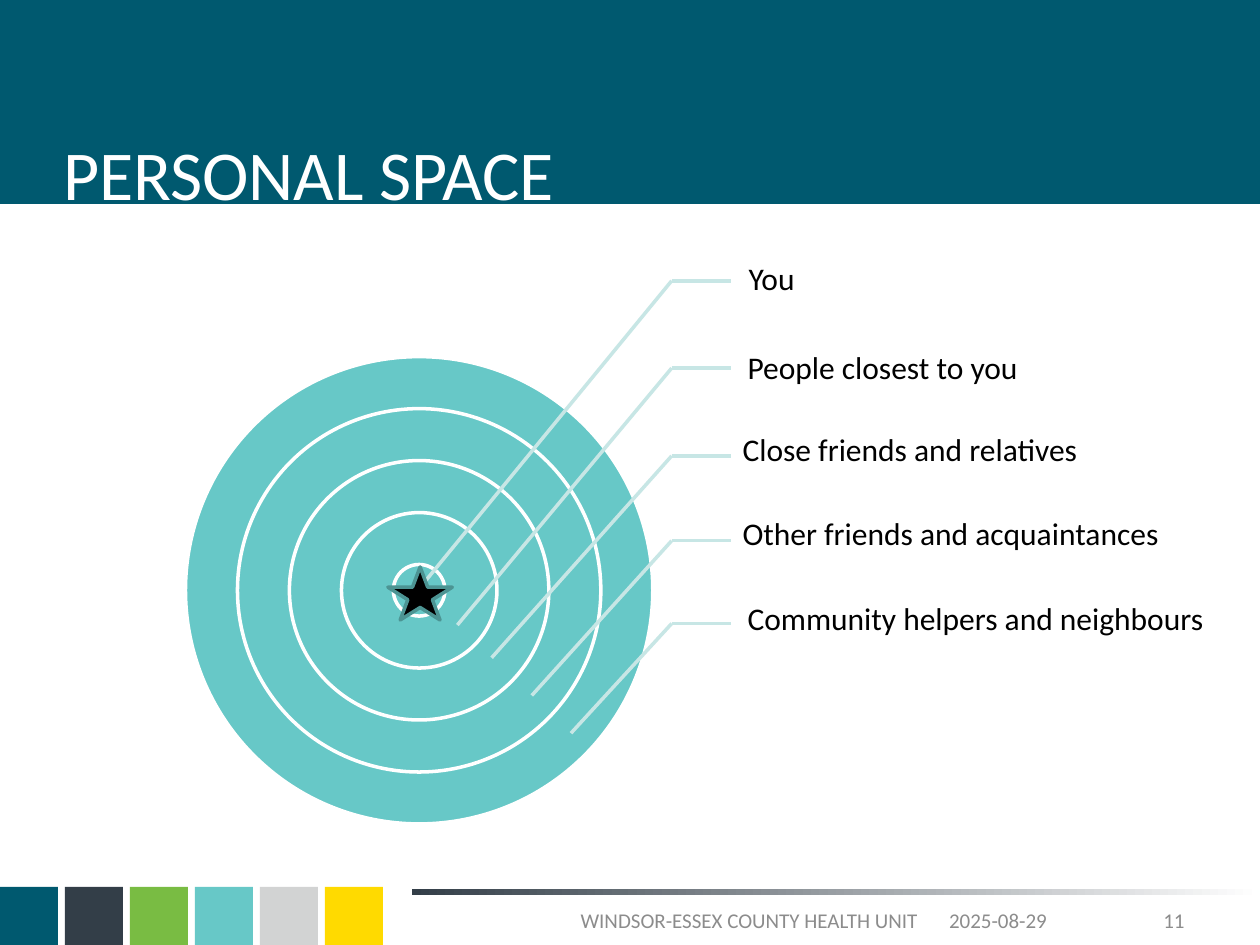
"""Build the personal space slide with its concentric circles and labels."""
from dataclasses import dataclass

import lxml.etree
import pptx
import pptx.dml.color
import pptx.enum.shapes
import pptx.enum.text
import pptx.oxml.ns
import pptx.util

Cm = pptx.util.Cm
Shape = pptx.enum.shapes.MSO_SHAPE
Align = pptx.enum.text.PP_ALIGN
Anchor = pptx.enum.text.MSO_ANCHOR

COLORS = {
    "petrol": "00596F",
    "slate": "333E48",
    "green": "79BC43",
    "aqua": "67C8C7",
    "grey": "D2D3D3",
    "yellow": "FFDA00",
    "leader": "C7E6E5",
    "star edge": "4C9493",
    "footer": "8C8C8C",
    "white": "FFFFFF",
    "black": "000000",
}
FONT = "Calibri"
LINE_WIDTH = pptx.util.Pt(2)
SWATCHES = ("petrol", "slate", "green", "aqua", "grey", "yellow")
CENTER_X, CENTER_Y = 8.45, 11.9
RING_COUNT, RING_DIAMETER, RING_STEP = 5, 9.42, 2.095
ELBOW_X, LEADER_END_X = 13.54, 14.73
LABEL_HEIGHT = 1.68


@dataclass
class Zone:
    """A labelled ring: label position and leader geometry in centimetres."""
    text: str
    label_left: float
    label_width: float
    label_middle: float
    elbow_y: float
    tip_x: float
    tip_y: float


@dataclass
class FooterItem:
    """A footer text with its horizontal extent in centimetres."""
    text: str
    left: float
    width: float
    alignment: Align


ZONES = (
    Zone("You", 14.73, 4.72, 5.66, 5.66, 8.43, 11.89),
    Zone("People closest to you", 14.71, 7.24, 7.44, 7.42, 9.22, 12.6),
    Zone("Close friends and relatives", 14.61, 8.05, 9.09, 9.19, 9.91, 13.26),
    Zone("Other friends and acquaintances", 14.61, 9.07, 10.8, 10.9, 10.72, 14.02),
    Zone("Community helpers and neighbours", 14.71, 10.06, 12.5, 12.57, 11.51, 14.78),
)
FOOTER = (
    FooterItem("2025-08-29", 18.42, 3.4, Align.CENTER),
    FooterItem("WINDSOR-ESSEX COUNTY HEALTH UNIT", 8.31, 13.59, Align.CENTER),
    FooterItem("11", 21.89, 2.24, Align.RIGHT),
)


def rgb(name: str) -> pptx.dml.color.RGBColor:
    """Return the named colour."""
    return pptx.dml.color.RGBColor.from_string(COLORS[name])


def add_shape(slide, kind, left: float, top: float, width: float, height: float,
              fill: str, line: str | None = None):
    """Add a filled preset shape with an optional outline."""
    shape = slide.shapes.add_shape(kind, Cm(left), Cm(top), Cm(width), Cm(height))
    shape.shadow.inherit = False
    shape.fill.solid()
    shape.fill.fore_color.rgb = rgb(fill)
    if line:
        shape.line.color.rgb = rgb(line)
        shape.line.width = LINE_WIDTH
    else:
        shape.line.fill.background()
    return shape


def write_text(shape, text: str, *, size: float, color: str, alignment=Align.LEFT,
               anchor=Anchor.MIDDLE, insets=(0.25, 0.13, 0.25, 0.13),
               line_spacing: float = 1.0) -> None:
    """Write one formatted paragraph into a shape."""
    frame = shape.text_frame
    frame.word_wrap = True
    frame.auto_size = pptx.enum.text.MSO_AUTO_SIZE.NONE
    frame.vertical_anchor = anchor
    (frame.margin_left, frame.margin_top,
     frame.margin_right, frame.margin_bottom) = map(Cm, insets)
    paragraph = frame.paragraphs[0]
    paragraph.alignment = alignment
    paragraph.line_spacing = line_spacing
    run = paragraph.add_run()
    run.text = text
    run.font.name = FONT
    run.font.size = pptx.util.Pt(size)
    run.font.color.rgb = rgb(color)


def add_text(slide, text: str, left: float, top: float, width: float, height: float,
             **text_format) -> None:
    """Add a text box with one formatted paragraph."""
    box = slide.shapes.add_textbox(Cm(left), Cm(top), Cm(width), Cm(height))
    write_text(box, text, **text_format)


def add_line(slide, start_x: float, start_y: float, end_x: float, end_y: float) -> None:
    """Add a straight leader segment without a shadow."""
    connector = slide.shapes.add_connector(
        pptx.enum.shapes.MSO_CONNECTOR.STRAIGHT,
        Cm(start_x), Cm(start_y), Cm(end_x), Cm(end_y))
    connector.line.color.rgb = rgb("leader")
    connector.line.width = LINE_WIDTH
    properties = connector.element.find(pptx.oxml.ns.qn("p:spPr"))
    lxml.etree.SubElement(properties, pptx.oxml.ns.qn("a:effectLst"))


def add_frame(slide) -> None:
    """Add the title band, the colour swatches and the fading footer rule."""
    add_shape(slide, Shape.RECTANGLE, 0, 0, 25.4, 4.11, "petrol")
    for index, color in enumerate(SWATCHES):
        add_shape(slide, Shape.RECTANGLE, 1.31 * index, 17.88, 1.17, 1.17, color)
    rule = add_shape(slide, Shape.RECTANGLE, 8.31, 17.92, 17.09, 0.13, "slate")
    rule.fill.gradient()
    rule.fill.gradient_angle = 0
    for stop, color in zip(rule.fill.gradient_stops, ("slate", "white")):
        stop.color.rgb = rgb(color)


def add_title(slide, text: str) -> None:
    """Place the title placeholder in front of the band."""
    title = slide.shapes.title
    title.left, title.top, title.width, title.height = map(Cm, (1.27, 0.76, 22.86, 3.56))
    write_text(title, text, size=40, color="white", anchor=Anchor.BOTTOM,
               insets=(0, 0, 0, 0))
    title.element.getparent().append(title.element)


def add_rings(slide) -> None:
    """Add the concentric rings from the largest to the smallest."""
    for index in range(RING_COUNT):
        diameter = RING_DIAMETER - RING_STEP * index
        add_shape(slide, Shape.OVAL, CENTER_X - diameter / 2, CENTER_Y - diameter / 2,
                  diameter, diameter, "aqua", "white")


def add_zone(slide, zone: Zone) -> None:
    """Add the label of a zone and its bent leader."""
    add_text(slide, zone.text, zone.label_left, zone.label_middle - LABEL_HEIGHT / 2,
             zone.label_width, LABEL_HEIGHT, size=18, color="black",
             insets=(0.36, 0.08, 0.08, 0.08), line_spacing=0.9)
    add_line(slide, ELBOW_X, zone.elbow_y, LEADER_END_X, zone.elbow_y)
    add_line(slide, ELBOW_X, zone.elbow_y, zone.tip_x, zone.tip_y)


def main() -> None:
    """Build and save the presentation."""
    presentation = pptx.Presentation()
    presentation.slide_width, presentation.slide_height = Cm(25.4), Cm(19.05)
    slide = presentation.slides.add_slide(presentation.slide_layouts[5])
    add_frame(slide)
    add_title(slide, "PERSONAL SPACE")
    add_rings(slide)
    for zone in ZONES:
        add_zone(slide, zone)
    for item in FOOTER:
        add_text(slide, item.text, item.left, 18.03, item.width, 1.02, size=12,
                 color="footer", alignment=item.alignment)
    add_shape(slide, Shape.STAR_5_POINT, 7.82, 11.43, 1.3, 1.07, "black", "star edge")
    presentation.save("out.pptx")


if __name__ == "__main__":
    main()
